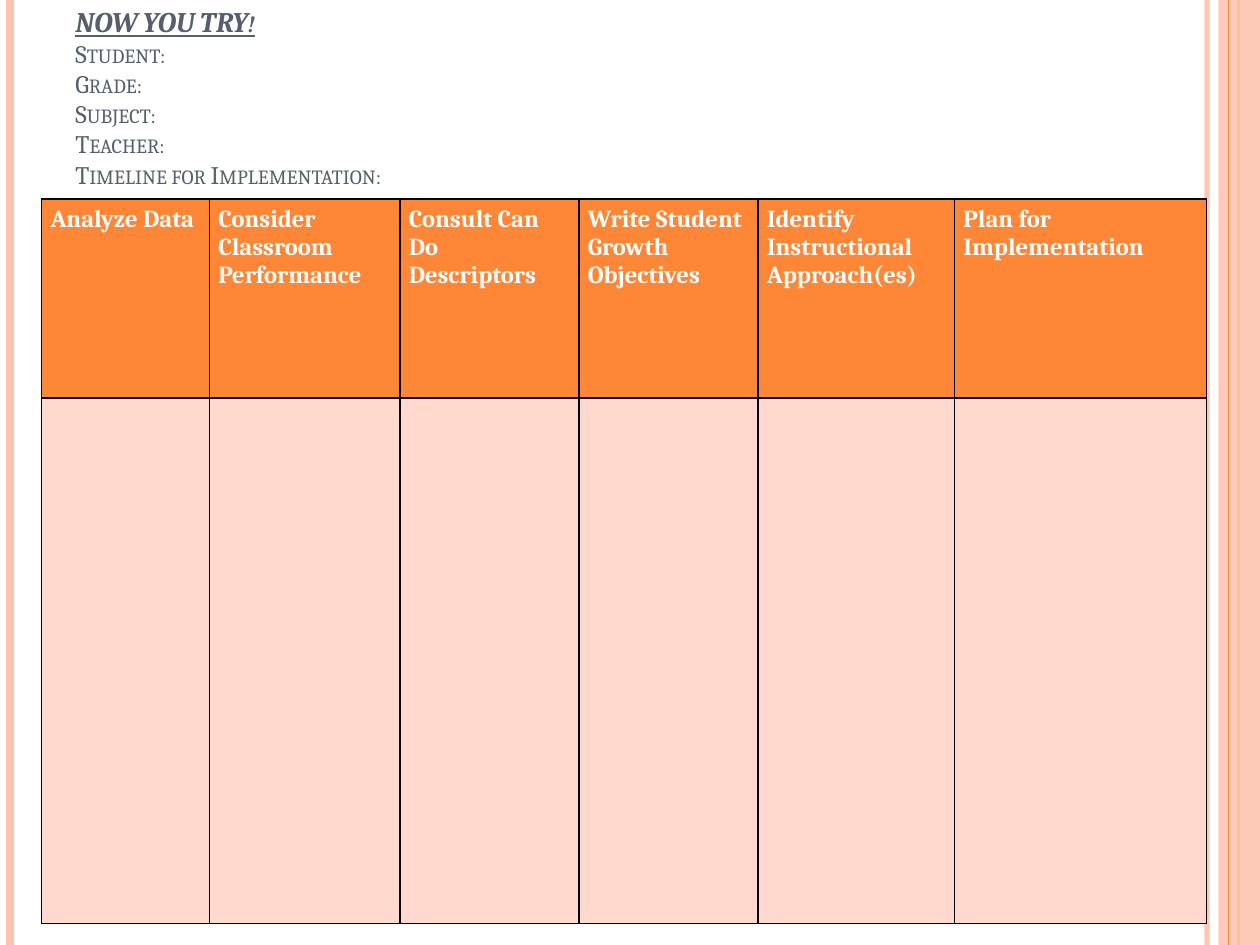
from pptx import Presentation
from pptx import util as u
from pptx.dml.color import RGBColor
from pptx.enum import shapes, text
from pptx.oxml import parse_xml
from pptx.oxml.ns import nsdecls, qn
from lxml import etree

THEME = {
    "font": "Cambria",
    "orange": "FE8637",
    "peach": "FEC3AE",
    "pale": "FFD9CE",
    "slate": "575F6D",
    "white": "FFFFFF",
    "border": "000000",
    "heading": 16.2,
    "label": 14.4,
    "cell": 14,
}
WIDTH, HEIGHT = 25.4, 19.05

HEADING = "NOW YOU TRY!"
LABELS = ["Student:", "Grade:", "Subject:", "Teacher:", "Timeline for Implementation:"]
COLUMNS = [
    ("Analyze Data", 3.38),
    ("Consider Classroom Performance", 3.84),
    ("Consult Can Do Descriptors", 3.61),
    ("Write Student Growth Objectives", 3.61),
    ("Identify Instructional Approach(es)", 3.96),
    ("Plan for Implementation", 5.08),
]
ROWS = [(4.01, "orange"), (10.6, "pale")]
TABLE_LEFT, TABLE_TOP = 0.84, 4.01

STRIPES_BEHIND = [
    (24.33, "peach", 3, 93),
    (0.21, "peach", 4.5, 100),
    (24.97, "orange", 1.5, 100),
]
STRIPE_FRONT = (24.77, "orange", 0.75, 100)
BAND_LEFT, BAND_ALPHA = 24.56, 87


def color(name):
    return RGBColor.from_string(THEME[name])


def set_alpha(element, percent):
    if percent < 100:
        tint = next(element.iter(qn("a:srgbClr")))
        etree.SubElement(tint, qn("a:alpha"), val=str(percent * 1000))


def add_stripe(page, x, name, weight, alpha):
    stripe = page.shapes.add_connector(
        shapes.MSO_CONNECTOR.STRAIGHT, u.Cm(x), u.Cm(0), u.Cm(x), u.Cm(HEIGHT))
    stripe.line.color.rgb = color(name)
    stripe.line.width = u.Pt(weight)
    properties = stripe._element.spPr
    set_alpha(properties, alpha)
    etree.SubElement(properties, qn("a:effectLst"))


def add_band(page):
    band = page.shapes.add_shape(
        shapes.MSO_SHAPE.RECTANGLE, u.Cm(BAND_LEFT), u.Cm(0),
        u.Cm(WIDTH - BAND_LEFT), u.Cm(HEIGHT))
    band.shadow.inherit = False
    band.fill.solid()
    band.fill.fore_color.rgb = color("peach")
    band.line.fill.background()
    set_alpha(band._element.spPr, BAND_ALPHA)


def add_span(para, words, size, name, bold=False):
    span = para.add_run()
    span.text = words
    span.font.name = THEME["font"]
    span.font.size = u.Pt(THEME[size])
    span.font.color.rgb = color(name)
    span.font.bold = bold
    return span


def add_title(page):
    box = page.shapes.add_textbox(u.Cm(1.27), u.Cm(0.76), u.Cm(20.75), u.Cm(3.18))
    frame = box.text_frame
    frame.word_wrap = True
    frame.vertical_anchor = text.MSO_ANCHOR.BOTTOM
    para = frame.paragraphs[0]
    heading = add_span(para, HEADING, "heading", "slate", bold=True)
    heading.font.italic = True
    heading.font.underline = True
    spans = [heading]
    for label in LABELS:
        para.add_line_break()
        spans.append(add_span(para, label, "label", "slate"))
    for span in spans:
        span.font._element.set("cap", "small")


def add_borders(cell):
    properties = cell._tc.get_or_add_tcPr()
    for position, side in enumerate(("lnL", "lnR", "lnT", "lnB")):
        properties.insert(position, parse_xml(
            f'<a:{side} {nsdecls("a")} w="{u.Pt(1)}"><a:solidFill>'
            f'<a:srgbClr val="{THEME["border"]}"/></a:solidFill></a:{side}>'))


def add_planner(page):
    frame = page.shapes.add_table(
        len(ROWS), len(COLUMNS), u.Cm(TABLE_LEFT), u.Cm(TABLE_TOP),
        u.Cm(sum(width for _, width in COLUMNS)),
        u.Cm(sum(height for height, _ in ROWS)))
    table = frame.table
    for column, (_, width) in zip(table.columns, COLUMNS):
        column.width = u.Cm(width)
    for row, (height, fill) in zip(table.rows, ROWS):
        row.height = u.Cm(height)
        for cell in row.cells:
            cell.margin_left = cell.margin_right = u.Cm(0.18)
            cell.margin_top = cell.margin_bottom = u.Cm(0.13)
            cell.fill.solid()
            cell.fill.fore_color.rgb = color(fill)
            add_borders(cell)
    for cell, (words, _) in zip(table.rows[0].cells, COLUMNS):
        add_span(cell.text_frame.paragraphs[0], words, "cell", "white", bold=True)


def main():
    deck = Presentation()
    deck.slide_width, deck.slide_height = u.Cm(WIDTH), u.Cm(HEIGHT)
    page = deck.slides.add_slide(deck.slide_layouts[6])
    for stripe in STRIPES_BEHIND:
        add_stripe(page, *stripe)
    add_band(page)
    add_stripe(page, *STRIPE_FRONT)
    add_title(page)
    add_planner(page)
    deck.save("out.pptx")


if __name__ == "__main__":
    main()
